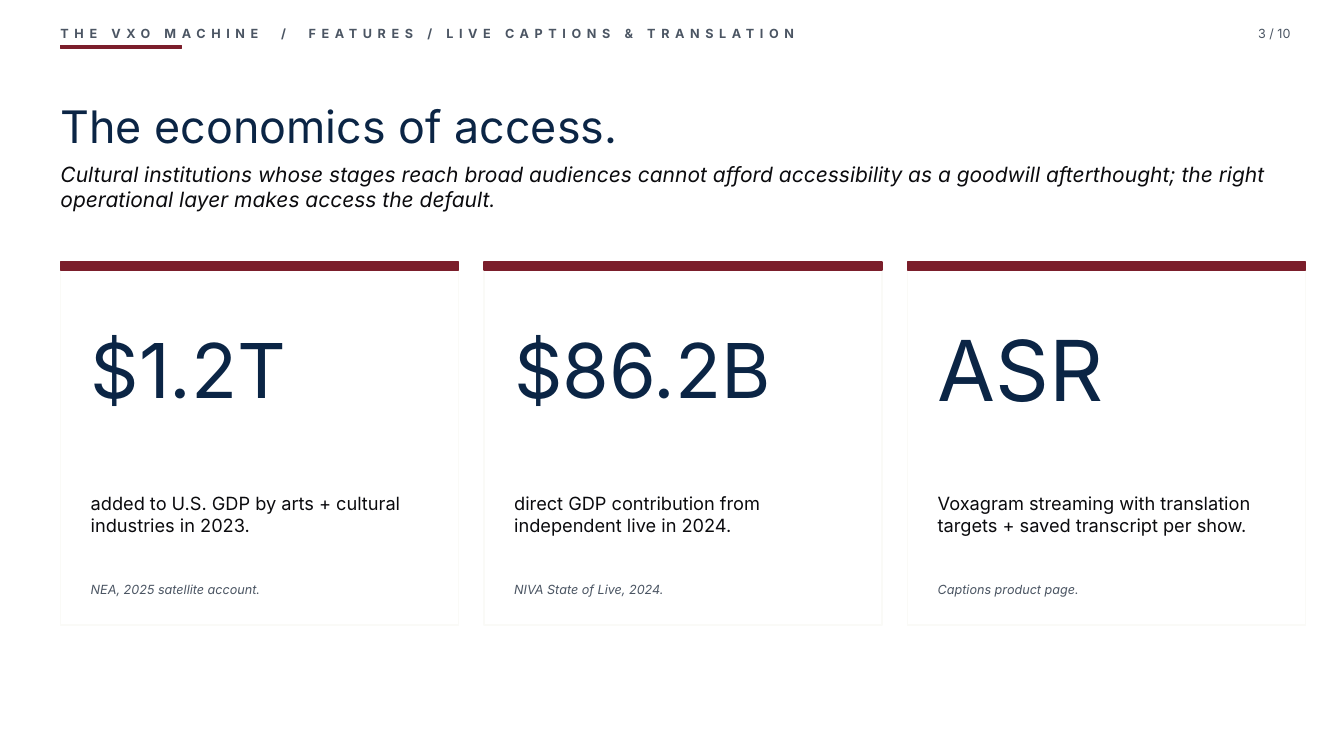
import pptx
import pptx.dml.color
import pptx.enum.shapes
import pptx.enum.text
import pptx.util

Inches = pptx.util.Inches
RGBColor = pptx.dml.color.RGBColor
Align = pptx.enum.text.PP_ALIGN

NAVY = RGBColor(0x0B, 0x25, 0x45)
BURGUNDY = RGBColor(0x7B, 0x1E, 0x2B)
INK = RGBColor(0x0B, 0x0B, 0x0E)
SLATE = RGBColor(0x4B, 0x55, 0x63)
IVORY = RGBColor(0xFA, 0xFA, 0xF7)
WHITE = RGBColor(0xFF, 0xFF, 0xFF)

FONT = "Inter"
MARGIN = 0.6
CONTENT_WIDTH = 12.1
CARD_WIDTH, CARD_HEIGHT, CARD_GAP = 3.95, 3.6, 0.25
CARD_PADDING = 0.3

STATS = [
    ("$1.2T", 54, "added to U.S. GDP by arts + cultural industries in 2023.",
     "NEA, 2025 satellite account."),
    ("$86.2B", 54, "direct GDP contribution from independent live in 2024.",
     "NIVA State of Live, 2024."),
    ("ASR", 60, "Voxagram streaming with translation targets + saved transcript per show.",
     "Captions product page."),
]


def write_text(holder, text, size, color, bold=False, italic=False, align=Align.LEFT):
    """Fill a text box or placeholder with one unpadded, centred-in-height paragraph."""
    frame = holder.text_frame
    frame.text = text
    frame.word_wrap = True
    frame.auto_size = pptx.enum.text.MSO_AUTO_SIZE.NONE
    frame.vertical_anchor = pptx.enum.text.MSO_ANCHOR.MIDDLE
    frame.margin_left = frame.margin_right = 0
    frame.margin_top = frame.margin_bottom = 0
    paragraph = frame.paragraphs[0]
    paragraph.alignment = align
    run = paragraph.runs[0]
    run.font.name = FONT
    run.font.size = pptx.util.Pt(size)
    run.font.color.rgb = color
    run.font.bold = bold
    run.font.italic = italic
    return run


def add_text(slide, left, top, width, height, *content, **style):
    holder = slide.shapes.add_textbox(
        Inches(left), Inches(top), Inches(width), Inches(height))
    return write_text(holder, *content, **style)


def add_panel(slide, left, top, width, height, fill, outline):
    panel = slide.shapes.add_shape(
        pptx.enum.shapes.MSO_SHAPE.RECTANGLE,
        Inches(left), Inches(top), Inches(width), Inches(height))
    panel.shadow.inherit = False
    panel.fill.solid()
    panel.fill.fore_color.rgb = fill
    panel.line.color.rgb = outline
    panel.line.width = pptx.util.Pt(1)


def add_header(slide, left, top):
    add_panel(slide, left, top + 0.27, 1.2, 0.03, BURGUNDY, BURGUNDY)
    breadcrumb = add_text(
        slide, left, top, 9, 0.3,
        "THE VXO MACHINE  /  FEATURES / LIVE CAPTIONS & TRANSLATION",
        9, SLATE, bold=True)
    breadcrumb.font._element.set("spc", "400")
    add_text(slide, left + 11.6, top, 0.6, 0.3, "3 / 10", 9, SLATE, align=Align.RIGHT)


def add_heading(slide, left, top, width):
    title = slide.shapes.title
    title.left, title.top = Inches(left), Inches(top)
    title.width, title.height = Inches(width), Inches(0.8)
    write_text(title, "The economics of access.", 32, NAVY)
    add_text(
        slide, left, top + 0.75, width, 0.5,
        "Cultural institutions whose stages reach broad audiences cannot afford "
        "accessibility as a goodwill afterthought; the right operational layer "
        "makes access the default.",
        15, INK, italic=True)


def add_stat_card(slide, left, top, width, height, stat):
    figure, figure_size, caption, citation = stat
    add_panel(slide, left, top, width, height, WHITE, IVORY)
    add_panel(slide, left, top, width, 0.08, BURGUNDY, BURGUNDY)
    inner_left = left + CARD_PADDING
    inner_width = width - 2 * CARD_PADDING
    add_text(slide, inner_left, top + 0.4, inner_width, 1.3, figure, figure_size, NAVY)
    add_text(slide, inner_left, top + 1.85, inner_width, 1.3, caption, 13, INK)
    add_text(slide, inner_left, top + 3.05, inner_width, 0.4, citation, 9, SLATE,
             italic=True)


def main():
    deck = pptx.Presentation()
    deck.slide_width, deck.slide_height = Inches(13.33), Inches(7.5)
    slide = deck.slides.add_slide(deck.slide_layouts.get_by_name("Title Only"))
    slide.background.fill.solid()
    slide.background.fill.fore_color.rgb = WHITE

    add_header(slide, MARGIN, 0.18)
    add_heading(slide, MARGIN, 0.85, CONTENT_WIDTH)
    for column, stat in enumerate(STATS):
        card_left = MARGIN + column * (CARD_WIDTH + CARD_GAP)
        add_stat_card(slide, card_left, 2.6, CARD_WIDTH, CARD_HEIGHT, stat)

    deck.save("out.pptx")


if __name__ == "__main__":
    main()
